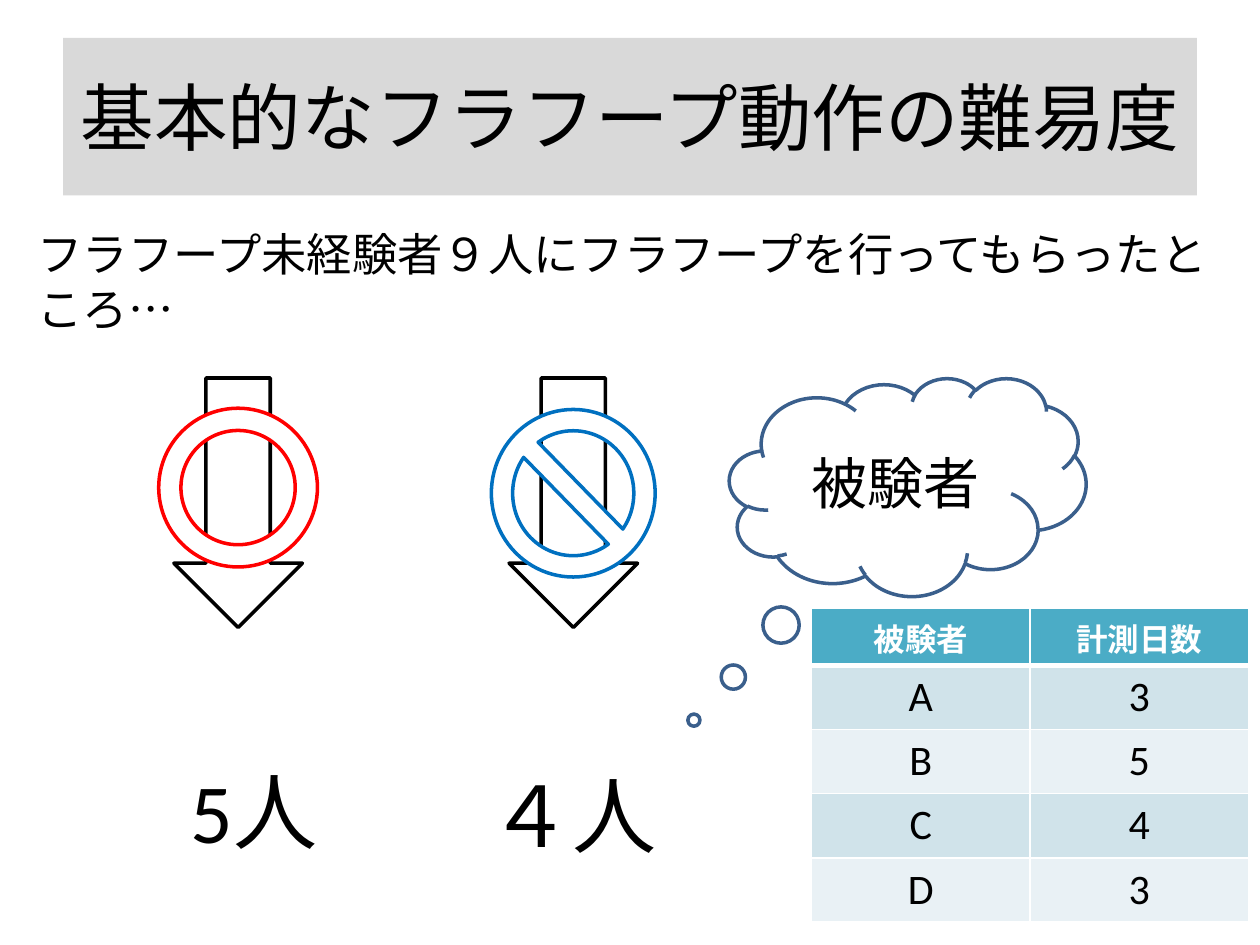
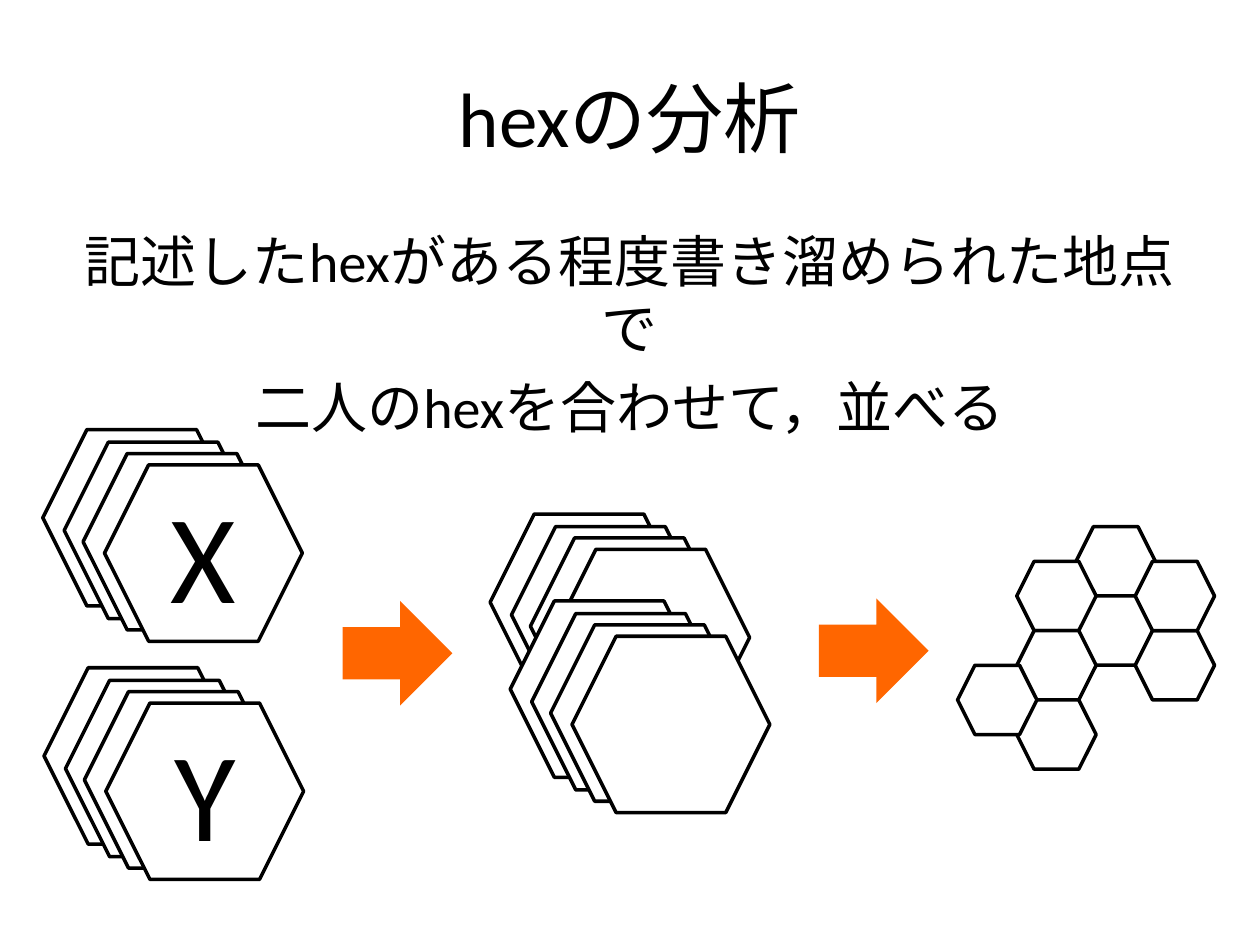
from dataclasses import dataclass

from lxml import etree
from pptx import Presentation
from pptx.dml.color import RGBColor
from pptx.enum.lang import MSO_LANGUAGE_ID as Lang
from pptx.enum.shapes import MSO_SHAPE as Kind
from pptx.enum.text import MSO_ANCHOR as Anchor
from pptx.enum.text import MSO_AUTO_SIZE as Fit
from pptx.enum.text import PP_ALIGN as Align
from pptx.oxml.ns import qn
from pptx.util import Inches, Pt


@dataclass(frozen=True)
class Theme:
    font: str = "Calibri"
    ink: str = "000000"
    paper: str = "FFFFFF"
    band: str = "D9D9D9"
    red: str = "FF0000"
    blue: str = "0070C0"
    cloud: str = "3A5F8C"
    orange: str = "FF6600"
    head: str = "4BACC6"
    rows: tuple = ("D0E3EA", "E9F1F5")
    title: float = 44
    tight: float = 42
    lead: float = 25.9
    body: float = 32
    count: float = 48
    mark: float = 72
    label: float = 18
    cell: float = 24
    line: float = 2


T = Theme()
HEX = (1.57, 1.4)
CELL = (0.63, 0.55)
ARROW = (0.87, 0.83)
SHIFTS = ((0, 0), (0.17, 0.1), (0.32, 0.19), (0.49, 0.28))


def color(code):
    return RGBColor.from_string(code)


def paint(item, code):
    item.fill.solid()
    item.fill.fore_color.rgb = color(code)


def write(para, text, size, code=T.ink, bold=False, align=Align.CENTER):
    para.alignment = align
    run = para.add_run()
    run.text = text
    font = run.font
    font.name, font.size, font.bold = T.font, Pt(size), bold
    font.color.rgb = color(code)
    font.language_id = Lang.JAPANESE


def add_title(slide, text, size=T.title, fill=None):
    title = slide.shapes.title
    title.left, title.top = Inches(0.5), Inches(0.3)
    title.width, title.height = Inches(9), Inches(1.25)
    if fill:
        paint(title, fill)
    frame = title.text_frame
    frame.auto_size = Fit.NONE
    frame.vertical_anchor = Anchor.MIDDLE
    frame.margin_left = frame.margin_right = Inches(0.05)
    write(frame.paragraphs[0], text, size)


def add_body(slide, box, lines, size, align):
    frame = slide.shapes.add_textbox(*map(Inches, box)).text_frame
    frame.word_wrap = True
    for i, line in enumerate(lines):
        para = frame.add_paragraph() if i else frame.paragraphs[0]
        para.space_before = Pt(round(size * 0.2, 1))
        write(para, line, size, align=align)


def add_form(shapes, kind, box, fill=T.paper, line=None, adj=(), text="", size=0):
    """Add a flat preset shape, with an outline only if line is given."""
    form = shapes.add_shape(kind, *map(Inches, box))
    form.shadow.inherit = False
    paint(form, fill)
    if line:
        form.line.color.rgb = color(line)
        form.line.width = Pt(T.line)
    else:
        form.line.fill.background()
    for i, value in enumerate(adj):
        form.adjustments[i] = value
    if text:
        form.text_frame.vertical_anchor = Anchor.MIDDLE
        write(form.text_frame.paragraphs[0], text, size)


def add_sign(slide, left, kind, box, adj, line):
    """Add a down arrow with a round sign over it."""
    shapes = slide.shapes.add_group_shape().shapes
    add_form(shapes, Kind.DOWN_ARROW, (left, 3, 1.02, 1.98), line=T.ink)
    add_form(shapes, kind, box, line=line, adj=(adj,))


def add_edge(cell, **widths):
    """Draw white cell borders; the keys are L, R, T and B."""
    props = cell._tc.get_or_add_tcPr()
    for side, width in widths.items():
        edge = etree.SubElement(props, qn(f"a:ln{side}"), w=str(Pt(width)))
        fill = etree.SubElement(edge, qn("a:solidFill"))
        etree.SubElement(fill, qn("a:srgbClr"), val=T.paper)


def add_grid(slide, box, rows):
    frame = slide.shapes.add_table(len(rows), len(rows[0]), *map(Inches, box))
    table = frame.table
    for r, row in enumerate(rows):
        top = r == 0
        table.rows[r].height = Inches(0.45 if top else 0.51)
        for c, text in enumerate(row):
            cell = table.cell(r, c)
            add_edge(cell, L=1, R=1, T=3 if r == 1 else 1, B=3 if top else 1)
            paint(cell, T.head if top else T.rows[(r - 1) % 2])
            write(cell.text_frame.paragraphs[0], text,
                  T.label if top else T.cell, T.paper if top else T.ink, top)


def add_stack(slide, left, top, text=""):
    """Add four shifted hexagons, the front one with text."""
    shapes = slide.shapes.add_group_shape().shapes
    for dx, dy in SHIFTS:
        front = (dx, dy) == SHIFTS[-1]
        add_form(shapes, Kind.HEXAGON, (left + dx, top + dy, *HEX),
                 line=T.ink, text=text if front else "", size=T.mark)


def add_comb(slide, left, top, spots):
    """Add hexagons at (column, half row) spots of a honeycomb."""
    shapes = slide.shapes.add_group_shape().shapes
    for col, half in spots:
        box = (left + col * 0.47, top + half * CELL[1] / 2, *CELL)
        add_form(shapes, Kind.HEXAGON, box, line=T.ink)


def build_level(slide):
    add_title(slide, "基本的なフラフープ動作の難易度", T.tight, T.band)
    add_body(slide, (0.2, 1.75, 9.69, 0.74),
             ["フラフープ未経験者９人にフラフープを行ってもらったところ…"],
             T.lead, Align.LEFT)
    add_sign(slide, 1.38, Kind.DONUT, (1.26, 3.24, 1.26, 1.26), 0.14, T.red)
    add_sign(slide, 4.04, Kind.NO_SYMBOL, (3.9, 3.25, 1.3, 1.33), 0.13, T.blue)
    for left, high, text in ((0.44, 1.42, "5人"), (2.97, 1.48, "４人")):
        add_form(slide.shapes, Kind.RECTANGLE, (left, 5.72, 3.15, high),
                 text=text, size=T.count)
    add_form(slide.shapes, Kind.CLOUD_CALLOUT, (5.79, 3, 2.83, 1.73),
             line=T.cloud, adj=(-0.6, 1.07), text="被験者", size=T.body)
    add_grid(slide, (6.44, 4.83, 3.47, 2.49),
             [("被験者", "計測日数"),
              ("A", "3"), ("B", "5"), ("C", "4"), ("D", "3")])


def build_hex(slide):
    add_title(slide, "hexの分析")
    add_body(slide, (0.5, 1.75, 9, 1.37),
             ["記述したhexがある程度書き溜められた地点で",
              "二人のhexを合わせて，並べる"], T.body, Align.CENTER)
    add_stack(slide, 0.34, 3.41, "X")
    add_stack(slide, 0.35, 5.3, "Y")
    add_stack(slide, 3.89, 4.08)
    add_stack(slide, 4.05, 4.77)
    for left, top in ((2.72, 4.77), (6.5, 4.75)):
        add_form(slide.shapes, Kind.RIGHT_ARROW, (left, top, *ARROW), T.orange)
    add_comb(slide, 7.6, 4.18, [(2, 0), (2, 2), (3, 3), (1, 1),
                                (1, 3), (1, 5), (0, 4), (3, 1)])


def main():
    deck = Presentation()
    deck.slide_width, deck.slide_height = Inches(10), Inches(7.5)
    plain = deck.slide_layouts[5]
    for build in (build_level, build_hex):
        build(deck.slides.add_slide(plain))
    deck.save("out.pptx")


if __name__ == "__main__":
    main()
